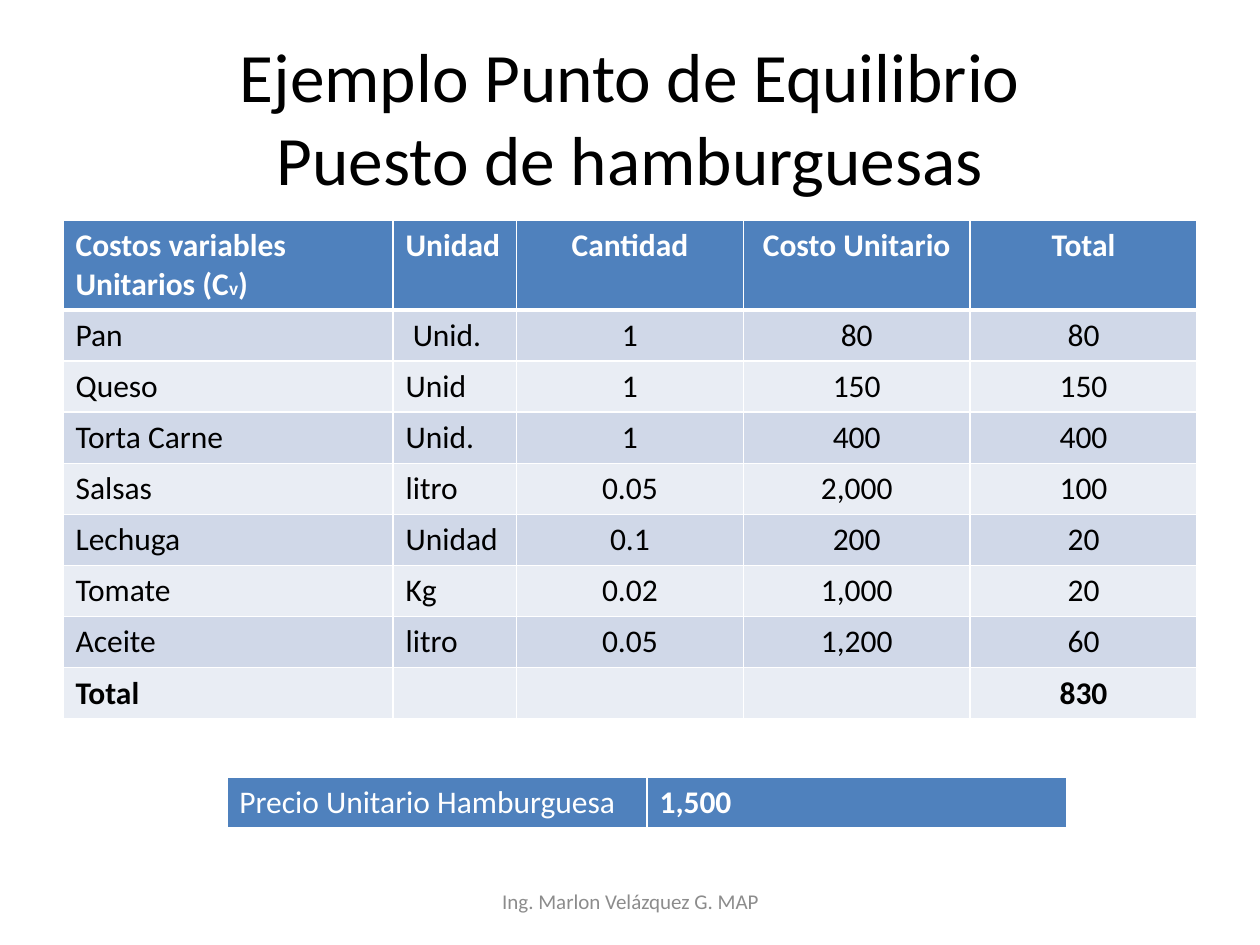
from lxml import etree
from pptx import Presentation
from pptx.dml.color import RGBColor
from pptx.enum.text import MSO_ANCHOR, PP_ALIGN
from pptx.oxml.ns import qn
from pptx.util import Inches, Pt

LEFT, CENTER = PP_ALIGN.LEFT, PP_ALIGN.CENTER
MIDDLE = MSO_ANCHOR.MIDDLE
TITLE_ONLY = 5
FONT = "Calibri"
COLORS = {
    "header": "4F81BD",
    "band_dark": "D0D8E8",
    "band_light": "E9EDF4",
    "white": "FFFFFF",
    "black": "000000",
    "footer": "8C8C8C",
}
COST_ROWS = [
    ["Costos variables Unitarios (C", "Unidad", "Cantidad", "Costo Unitario", "Total"],
    ["Pan", " Unid.", "1", "80", "80"],
    ["Queso", "Unid", "1", "150", "150"],
    ["Torta Carne", "Unid.", "1", "400", "400"],
    ["Salsas", "litro", "0.05", "2,000", "100"],
    ["Lechuga", "Unidad", "0.1", "200", "20"],
    ["Tomate", "Kg", "0.02", "1,000", "20"],
    ["Aceite", "litro", "0.05", "1,200", "60"],
    ["Total", "", "", "", "830"],
]


def format_span(span, size, color, bold=False):
    span.font.name = FONT
    span.font.size = Pt(size)
    span.font.bold = bold
    span.font.color.rgb = RGBColor.from_string(COLORS[color])


def format_frame(frame, size, color, align, bold=False):
    for para in frame.paragraphs:
        para.alignment = align
        for span in para.runs:
            format_span(span, size, color, bold)


def set_borders(cell, top, bottom):
    properties = cell._tc.get_or_add_tcPr()
    for side, width in (("L", 1), ("R", 1), ("T", top), ("B", bottom)):
        line = etree.SubElement(properties, qn(f"a:ln{side}"), w=str(Pt(width)))
        fill = etree.SubElement(line, qn("a:solidFill"))
        etree.SubElement(fill, qn("a:srgbClr"), val=COLORS["white"])


def fill_cell(cell, text, fill, color, align=LEFT, bold=False, top=1, bottom=1):
    set_borders(cell, top, bottom)
    cell.fill.solid()
    cell.fill.fore_color.rgb = RGBColor.from_string(COLORS[fill])
    cell.text_frame.text = text
    format_frame(cell.text_frame, 18, color, align, bold)


def add_grid(page, box, widths, heights):
    table = page.shapes.add_table(len(heights), len(widths), *map(Inches, box)).table
    for column, width in zip(table.columns, widths):
        column.width = Inches(width)
    for row, height in zip(table.rows, heights):
        row.height = Inches(height)
    return table


def place_title(page, box):
    title = page.shapes.title
    title.left, title.top, title.width, title.height = map(Inches, box)
    title.text_frame.text = "Ejemplo Punto de Equilibrio\vPuesto de hamburguesas"
    title.text_frame.vertical_anchor = MIDDLE
    format_frame(title.text_frame, 39.6, "black", CENTER)


def place_cost_table(page, box):
    header_height = 0.7
    last = len(COST_ROWS) - 1
    row_height = (box[3] - header_height) / last
    table = add_grid(page, box, [2.62, 0.98, 1.8, 1.8, 1.8],
                     [header_height] + [row_height] * last)
    for r, values in enumerate(COST_ROWS):
        band = "header" if r == 0 else "band_dark" if r % 2 else "band_light"
        for c, value in enumerate(values):
            fill_cell(table.cell(r, c), value, band,
                      color="black" if r else "white",
                      align=CENTER if c > 1 else LEFT,
                      bold=r in (0, last),
                      top=3 if r == 1 else 1,
                      bottom=3 if r == 0 else 1)
    heading = table.cell(0, 0).text_frame.paragraphs[0]
    for text, size in (("v", 11), (")", 18)):
        span = heading.add_run()
        span.text = text
        format_span(span, size, "white", bold=True)


def place_price_table(page, box):
    table = add_grid(page, box, [box[2] / 2] * 2, [box[3]])
    fill_cell(table.cell(0, 0), "Precio Unitario Hamburguesa", "header", "white", bottom=3)
    fill_cell(table.cell(0, 1), "1,500", "header", "white", bold=True, bottom=3)


def place_footer(page, box):
    frame = page.shapes.add_textbox(*map(Inches, box)).text_frame
    frame.word_wrap = True
    frame.vertical_anchor = MIDDLE
    frame.text = "Ing. Marlon Velázquez G. MAP"
    format_frame(frame, 12, "footer", CENTER)


def main():
    deck = Presentation()
    deck.slide_width, deck.slide_height = Inches(10), Inches(7.5)
    page = deck.slides.add_slide(deck.slide_layouts[TITLE_ONLY])
    place_title(page, (0.5, 0.3, 9, 1.25))
    place_cost_table(page, (0.5, 1.75, 9, 3.94))
    place_footer(page, (3.42, 6.95, 3.17, 0.4))
    place_price_table(page, (1.8, 6.17, 6.67, 0.41))
    deck.save("out.pptx")


if __name__ == "__main__":
    main()
